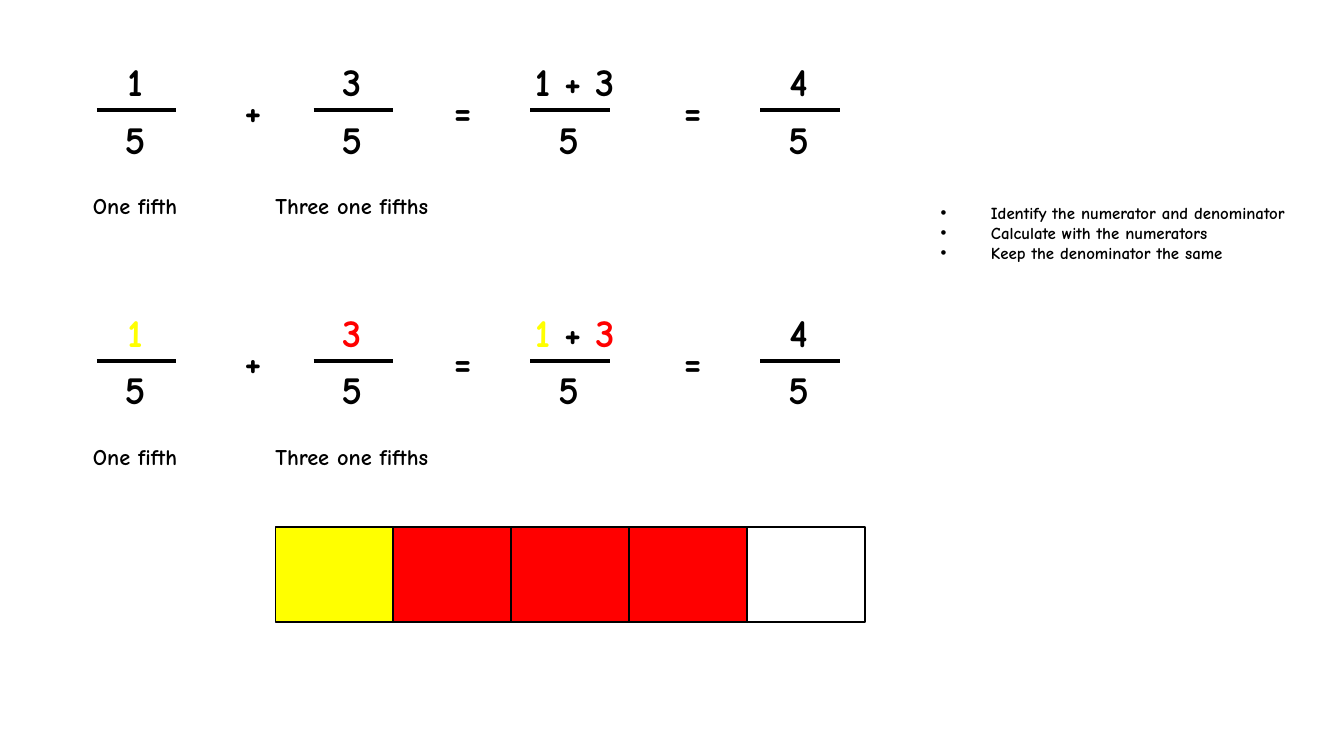
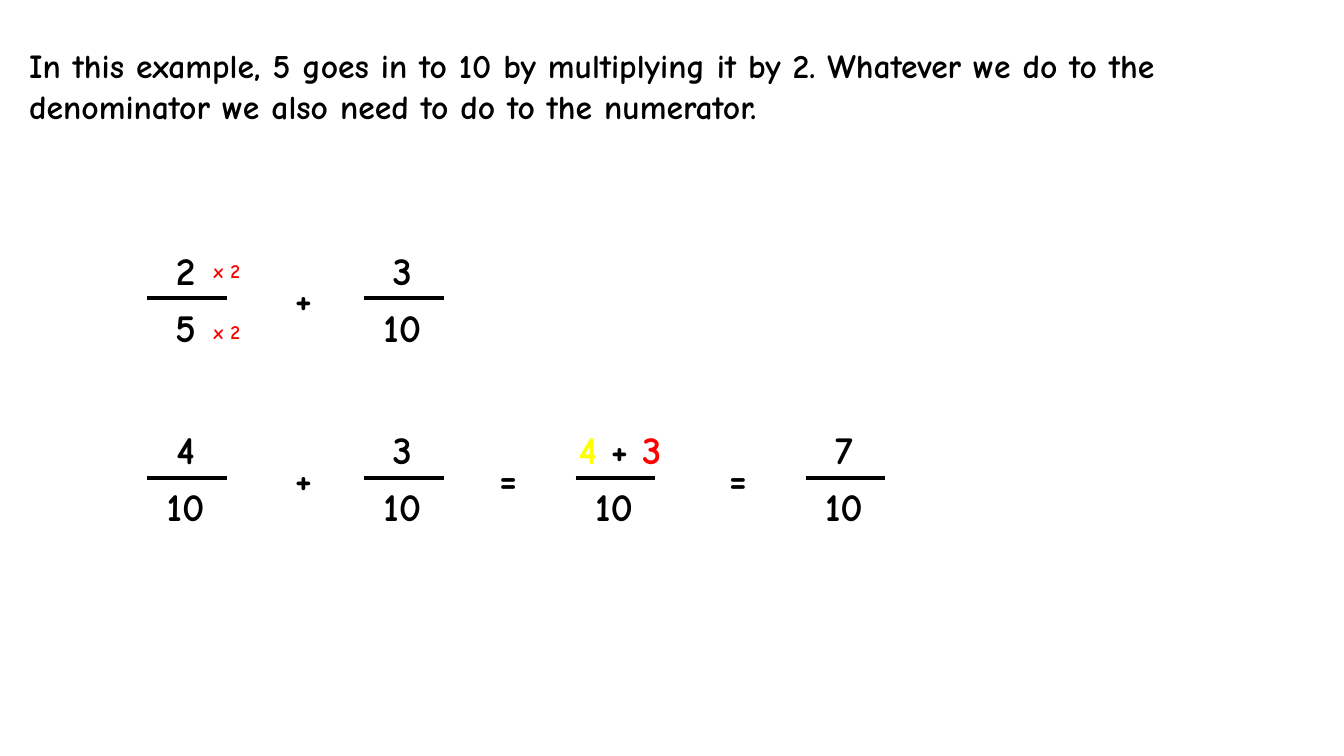
from dataclasses import dataclass

from lxml import etree
from pptx import Presentation
from pptx.dml.color import RGBColor
from pptx.enum.shapes import MSO_CONNECTOR as Connector, MSO_SHAPE as Shape
from pptx.enum.text import MSO_AUTO_SIZE as AutoSize, PP_ALIGN as Align
from pptx.oxml.ns import qn
from pptx.util import Inches, Pt


@dataclass(frozen=True)
class Theme:
    """Colours, font and type sizes shared by the slides."""
    font: str = "Comic Neue"
    ink: RGBColor = RGBColor(0, 0, 0)
    paper: RGBColor = RGBColor(255, 255, 255)
    first: RGBColor = RGBColor(255, 255, 0)
    second: RGBColor = RGBColor(255, 0, 0)
    digit: int = 28
    lead: int = 24
    label: int = 16
    factor: int = 14
    note: int = 12
    bar: int = 3
    outline: int = 1


THEME = Theme()
BAR_WIDTH = 0.79
DIGIT_CENTRE = 0.38
SUM_CENTRE = 0.44
ROW_HEIGHT = 0.57


def set_font(font, size, colour):
    """Apply the shared bold type in one size and colour."""
    font.name, font.size, font.bold = THEME.font, Pt(size), True
    font.color.rgb = colour


def add_bullet(para, indent):
    """Give a paragraph a hanging round bullet."""
    properties = para._p.get_or_add_pPr()
    properties.set("marL", str(Inches(indent)))
    properties.set("indent", str(Inches(-indent)))
    etree.SubElement(properties, qn("a:buFont"), typeface="Arial")
    etree.SubElement(properties, qn("a:buChar"), char="•")


def add_text(page, left, top, width, height, lines, size, align=Align.LEFT,
             wrap=True, colour=THEME.ink, bullet_indent=None):
    """Place lines of text; a line is a string or a list of (text, colour)."""
    box = page.shapes.add_textbox(Inches(left), Inches(top), Inches(width), Inches(height))
    frame = box.text_frame
    frame.word_wrap = wrap
    frame.auto_size = AutoSize.SHAPE_TO_FIT_TEXT
    for index, line in enumerate(lines):
        para = frame.add_paragraph() if index else frame.paragraphs[0]
        para.alignment = align
        if bullet_indent:
            add_bullet(para, bullet_indent)
        set_font(para.font, size, colour)
        if isinstance(line, str):
            para.add_run().text = line
            continue
        for text, run_colour in line:
            span = para.add_run()
            span.text = text
            span.font.color.rgb = run_colour


def add_symbol(page, centre, top, content, colour=THEME.ink, width=0.44):
    """Centre a digit, operator or sum on a given point."""
    add_text(page, centre - width / 2, top, width, ROW_HEIGHT, [content],
             THEME.digit, Align.CENTER, False, colour)


def add_operator(page, centre, bar_top, sign):
    """Place an operator level with a fraction bar."""
    add_symbol(page, centre, bar_top - ROW_HEIGHT / 2, sign)


def add_fraction(page, left, bar_top, numerator, denominator, colour=THEME.ink):
    """Draw a fraction whose bar starts at the given point."""
    is_sum = not isinstance(numerator, str)
    add_symbol(page, left + (SUM_CENTRE if is_sum else DIGIT_CENTRE), bar_top - ROW_HEIGHT,
               numerator, colour, 1.26 if is_sum else 0.44)
    add_symbol(page, left + DIGIT_CENTRE, bar_top, denominator,
               width=0.68 if len(denominator) > 1 else 0.44)
    bar = page.shapes.add_connector(Connector.STRAIGHT, Inches(left), Inches(bar_top),
                                    Inches(left + BAR_WIDTH), Inches(bar_top))
    bar.line.color.rgb = THEME.ink
    bar.line.width = Pt(THEME.bar)
    etree.SubElement(bar._element.spPr, qn("a:effectLst"))


def add_addends(page, left, bar_top, fractions, colours=(THEME.ink, THEME.ink)):
    """Draw two fractions with a plus between them."""
    for index, ((numerator, denominator), colour) in enumerate(zip(fractions, colours)):
        add_fraction(page, left + 2.15 * index, bar_top, numerator, denominator, colour)
    add_operator(page, left + 1.55, bar_top, "+")


def add_result(page, equals_centre, bar_top, numerators, total, denominator,
               colours=(THEME.ink, THEME.ink)):
    """Draw the combined fraction and the total, each after an equals sign."""
    first, second = zip(numerators, colours)
    combined = [first, (" + ", THEME.ink), second]
    for index, numerator in enumerate((combined, total)):
        centre = equals_centre + 2.28 * index
        add_operator(page, centre, bar_top, "=")
        add_fraction(page, centre + 0.67, bar_top, numerator, denominator)


def add_fifths_row(page, left, bar_top, colours):
    """Draw one fifth plus three fifths, with the names below."""
    add_addends(page, left, bar_top, [("1", "5"), ("3", "5")], colours)
    add_result(page, left + 3.63, bar_top, "13", "4", "5", colours)
    for index, name in enumerate(("One fifth", "Three one fifths")):
        add_text(page, left - 0.5 + 2.15 * index, bar_top + 0.77, 1.76, 0.37,
                 [name], THEME.label, Align.CENTER)


def add_bar_model(page, left, top, width, height, fills):
    """Draw equal adjoining cells, one for each fill."""
    cell_width = width / len(fills)
    for index, fill in enumerate(fills):
        cell = page.shapes.add_shape(Shape.RECTANGLE, Inches(left + cell_width * index),
                                     Inches(top), Inches(cell_width), Inches(height))
        cell.shadow.inherit = False
        cell.fill.solid()
        cell.fill.fore_color.rgb = fill
        cell.line.color.rgb = THEME.ink
        cell.line.width = Pt(THEME.outline)


def build_same_denominator(page):
    """Build the slide on adding fifths."""
    add_text(page, 9.23, 1.96, 4.08, 0.71,
             ["Identify the numerator and denominator", "Calculate with the numerators",
              "Keep the denominator the same"], THEME.note, bullet_indent=0.5)
    addend_colours = (THEME.first, THEME.second)
    for bar_top, colours in ((1.09, (THEME.ink, THEME.ink)), (3.58, addend_colours)):
        add_fifths_row(page, 0.96, bar_top, colours)
    add_bar_model(page, 2.73, 5.23, 5.85, 0.94,
                  [THEME.first] + [THEME.second] * 3 + [THEME.paper])


def build_different_denominators(page):
    """Build the slide on changing fifths to tenths."""
    add_text(page, 0.19, 0.4, 12.65, 0.91,
             ["In this example, 5 goes in to 10 by multiplying it by 2. Whatever we do to the "
              "denominator we also need to do to the numerator."], THEME.lead)
    left, start_top, answer_top = 1.46, 2.96, 4.74
    add_addends(page, left, start_top, [("2", "5"), ("3", "10")])
    for offset in (-0.44, 0.16):
        add_text(page, left + 0.53, start_top + offset, 0.52, 0.34, ["x 2"],
                 THEME.factor, Align.CENTER, False, THEME.second)
    add_addends(page, left, answer_top, [("4", "10"), ("3", "10")])
    add_result(page, left + 3.58, answer_top, "43", "7", "10", (THEME.first, THEME.second))


def main():
    """Build and save the deck."""
    deck = Presentation()
    deck.slide_width, deck.slide_height = Inches(13.33), Inches(7.5)
    for build in (build_same_denominator, build_different_denominators):
        page = deck.slides.add_slide(deck.slide_layouts[6])
        page.background.fill.solid()
        page.background.fill.fore_color.rgb = THEME.paper
        build(page)
    deck.save("out.pptx")


if __name__ == "__main__":
    main()
